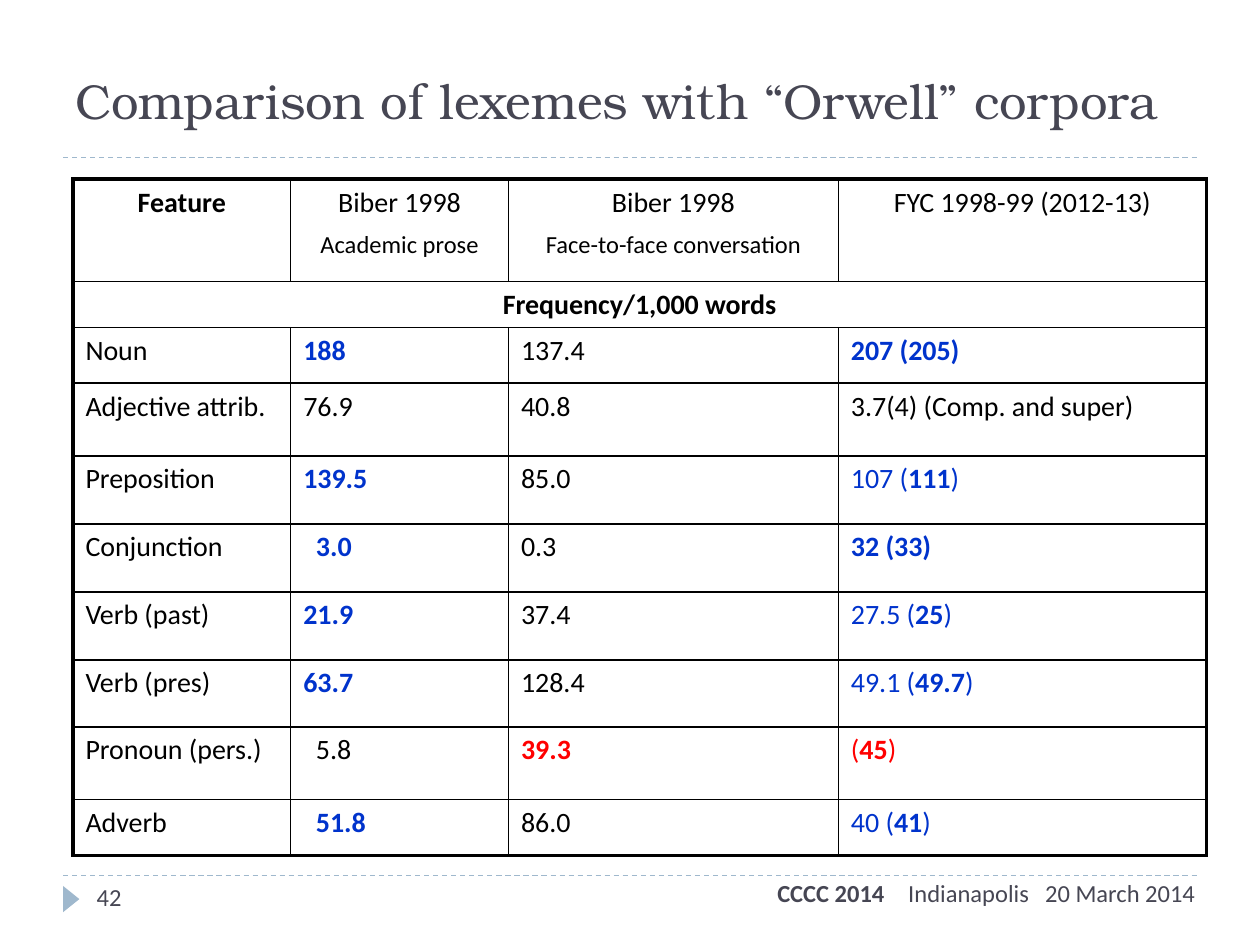
from dataclasses import dataclass

import pptx
import pptx.dml.color
import pptx.enum.dml
import pptx.enum.shapes
import pptx.enum.text
import pptx.oxml
import pptx.oxml.ns
import pptx.util

Cm = pptx.util.Cm
Pt = pptx.util.Pt
Align = pptx.enum.text.PP_ALIGN
Anchor = pptx.enum.text.MSO_ANCHOR


@dataclass
class Theme:
    ink: str = "000000"
    slate: str = "464653"
    pale: str = "9FB8CD"
    blue: str = "0033CC"
    red: str = "FF0000"
    serif: str = "TeX Gyre Bonum"
    sans: str = "Calibri"
    title: int = 28
    body: int = 16
    small: int = 14
    thick: float = 2.25
    thin: float = 1


theme = Theme()


def apply(item, values):
    for name, value in values.items():
        setattr(item, name, value)


def write(para, text, color, size, font=theme.sans):
    for index, part in enumerate(text.split("*")):
        if part:
            run = para.add_run()
            run.text = part
            apply(run.font, {"name": font, "size": Pt(size), "bold": index % 2 == 1})
            run.font.color.rgb = pptx.dml.color.RGBColor.from_string(color)


deck = pptx.Presentation()
apply(deck, {"slide_width": Cm(25.4), "slide_height": Cm(19.05)})
slide = deck.slides.add_slide(deck.slide_layouts[6])
shapes = slide.shapes
pale = pptx.dml.color.RGBColor.from_string(theme.pale)

for top in (17.65, 3.18):
    rule = shapes.add_connector(
        pptx.enum.shapes.MSO_CONNECTOR.STRAIGHT, Cm(1.27), Cm(top), Cm(24.13), Cm(top)
    )
    rule.line.color.rgb = pale
    apply(rule.line, {"width": Pt(0.75), "dash_style": pptx.enum.dml.MSO_LINE.DASH})
    pptx.oxml.ns.qn("a:effectLst")
    rule.element.spPr.append(
        pptx.oxml.parse_xml(f'<a:effectLst {pptx.oxml.ns.nsdecls("a")}/>')
    )

mark = shapes.add_shape(
    pptx.enum.shapes.MSO_SHAPE.ISOSCELES_TRIANGLE, Cm(1.17), Cm(17.96), Cm(0.53), Cm(0.33)
)
mark.rotation = 90
mark.shadow.inherit = False
mark.fill.solid()
mark.fill.fore_color.rgb = pale
mark.line.fill.background()

labels = [
    ("42", (1.7, 17.65, 5.5, 1.02), theme.sans, theme.small, {}),
    ("Comparison of lexemes with “Orwell” corpora", (1.27, 1.27, 22.86, 1.47),
     theme.serif, theme.title, {"vertical_anchor": Anchor.MIDDLE}),
    ("*CCCC 2014*\tIndianapolis\t20 March 2014", (10.36, 17.58, 13.97, 1.02),
     theme.sans, theme.small, {"margin_left": Cm(5.31), "margin_right": 0}),
]
for text, place, font, size, form in labels:
    frame = shapes.add_textbox(*map(Cm, place)).text_frame
    apply(frame, {"word_wrap": True, **form})
    para = frame.paragraphs[0]
    write(para, text, theme.slate, size, font)
    if "\t" in text:
        stops = "".join(f'<a:tab pos="{Cm(stop)}" algn="l"/>' for stop in (2.64, 5.4))
        para._p.get_or_add_pPr().append(pptx.oxml.parse_xml(
            f'<a:tabLst {pptx.oxml.ns.nsdecls("a")}>{stops}</a:tabLst>'
        ))

ink, blue, red = theme.ink, theme.blue, theme.red
data = [
    [("*Feature*", ink), ("Biber 1998\nAcademic prose", ink),
     ("Biber 1998\nFace-to-face conversation", ink), ("FYC 1998-99 (2012-13)", ink)],
    [("*Frequency/1,000 words*", ink)],
    [("Noun", ink), ("*188*", blue), ("137.4", ink), ("*207 (205)*", blue)],
    [("Adjective attrib.", ink), ("76.9", ink), ("40.8", ink),
     ("3.7(4) (Comp. and super)", ink)],
    [("Preposition", ink), ("*139.5*", blue), ("85.0", ink), ("107 (*111*)", blue)],
    [("Conjunction", ink), ("*3.0*", blue), ("0.3", ink), ("*32 (33)*", blue)],
    [("Verb (past)", ink), ("*21.9*", blue), ("37.4", ink), ("27.5 (*25*)", blue)],
    [("Verb (pres)", ink), ("*63.7*", blue), ("128.4", ink), ("49.1 (*49.7*)", blue)],
    [("Pronoun (pers.)", ink), ("5.8", ink), ("*39.3*", red), ("(*45*)", red)],
    [("Adverb", ink), ("*51.8*", blue), ("86.0", ink), ("40 (*41*)", blue)],
]
wide = [4.39, 4.39, 6.65, 7.42]
high = [2.06, 0.89, 1.12, 1.47, 1.37, 1.37, 1.37, 1.35, 1.47, 1.12]
inset = {(5, 1), (8, 1), (9, 1)}

grid = shapes.add_table(
    len(high), len(wide), Cm(1.47), Cm(3.61), Cm(sum(wide)), Cm(sum(high))
).table
apply(grid, {"first_row": False, "horz_banding": False})
for column, width in zip(grid.columns, wide):
    column.width = Cm(width)
for line, height in zip(grid.rows, high):
    line.height = Cm(height)
grid.cell(1, 0).merge(grid.cell(1, 3))

for row in range(len(high)):
    for col in range(len(wide)):
        cell = grid.cell(row, col)
        edges = {
            "L": col == 0,
            "R": col == len(wide) - 1 or row == 1,
            "T": row == 0,
            "B": row == len(high) - 1,
        }
        for side, outer in edges.items():
            weight = Pt(theme.thick if outer else theme.thin)
            cell._tc.get_or_add_tcPr().append(pptx.oxml.parse_xml(
                f'<a:ln{side} {pptx.oxml.ns.nsdecls("a")} w="{weight}"><a:solidFill>'
                f'<a:srgbClr val="{theme.ink}"/></a:solidFill></a:ln{side}>'
            ))
        cell.fill.background()
        if col >= len(data[row]):
            continue
        if (row, col) in inset:
            cell.margin_left = Cm(0.51)
        text, color = data[row][col]
        for index, part in enumerate(text.split("\n")):
            frame = cell.text_frame
            para = frame.add_paragraph() if index else frame.paragraphs[0]
            apply(para, {
                "alignment": Align.CENTER if row < 2 else Align.LEFT,
                "space_before": Pt(6),
            })
            write(para, part, color, theme.small if index else theme.body)

deck.save("out.pptx")
